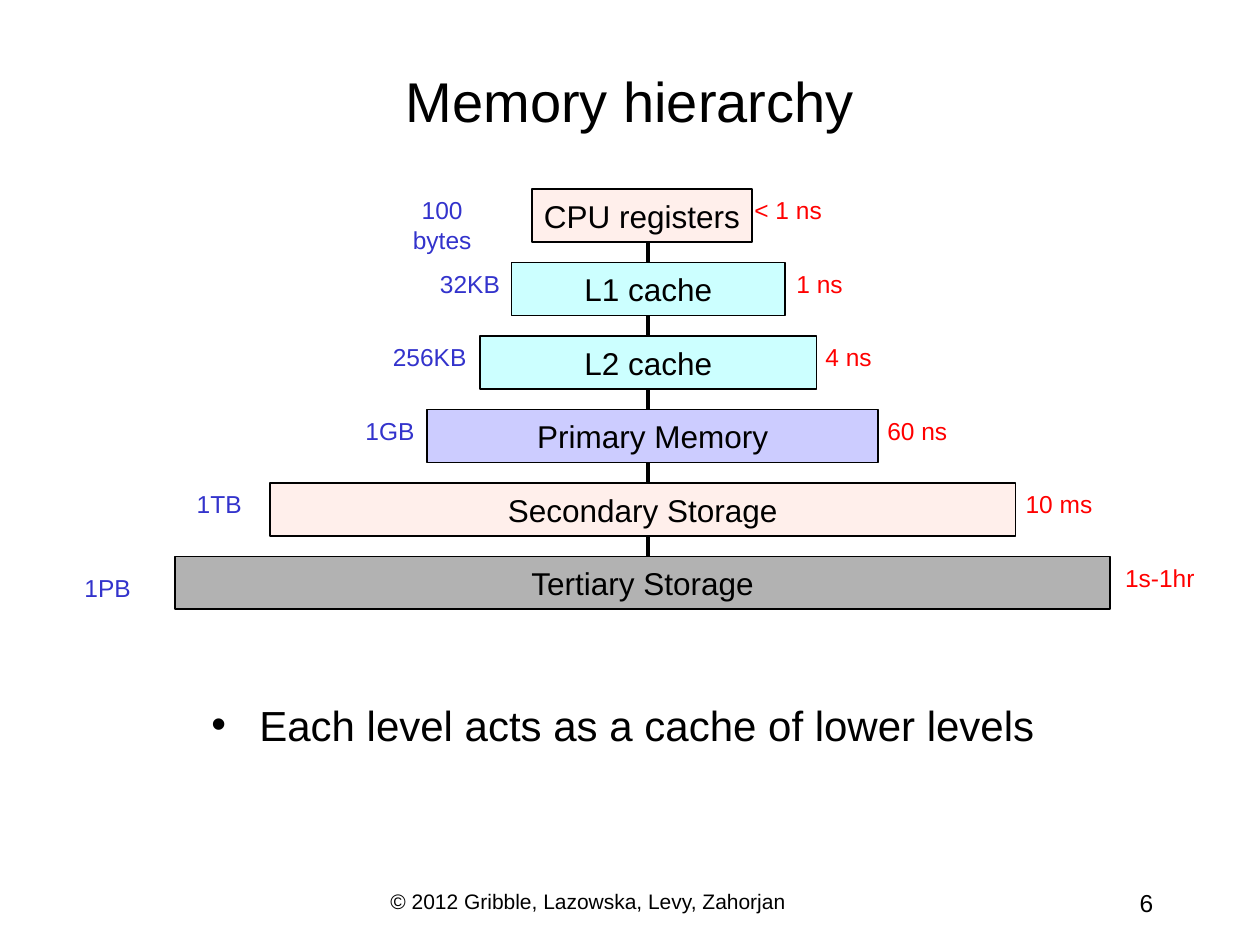
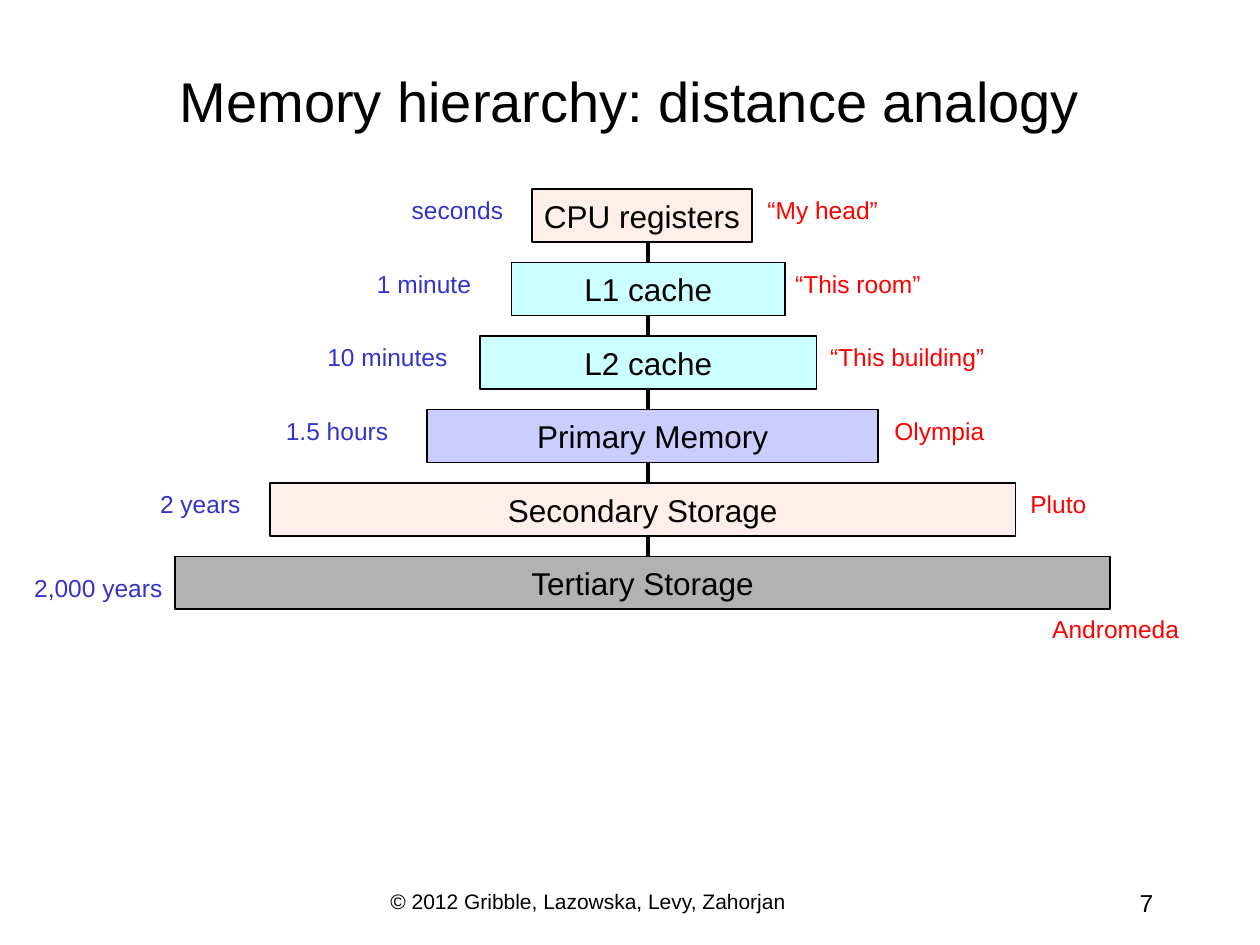
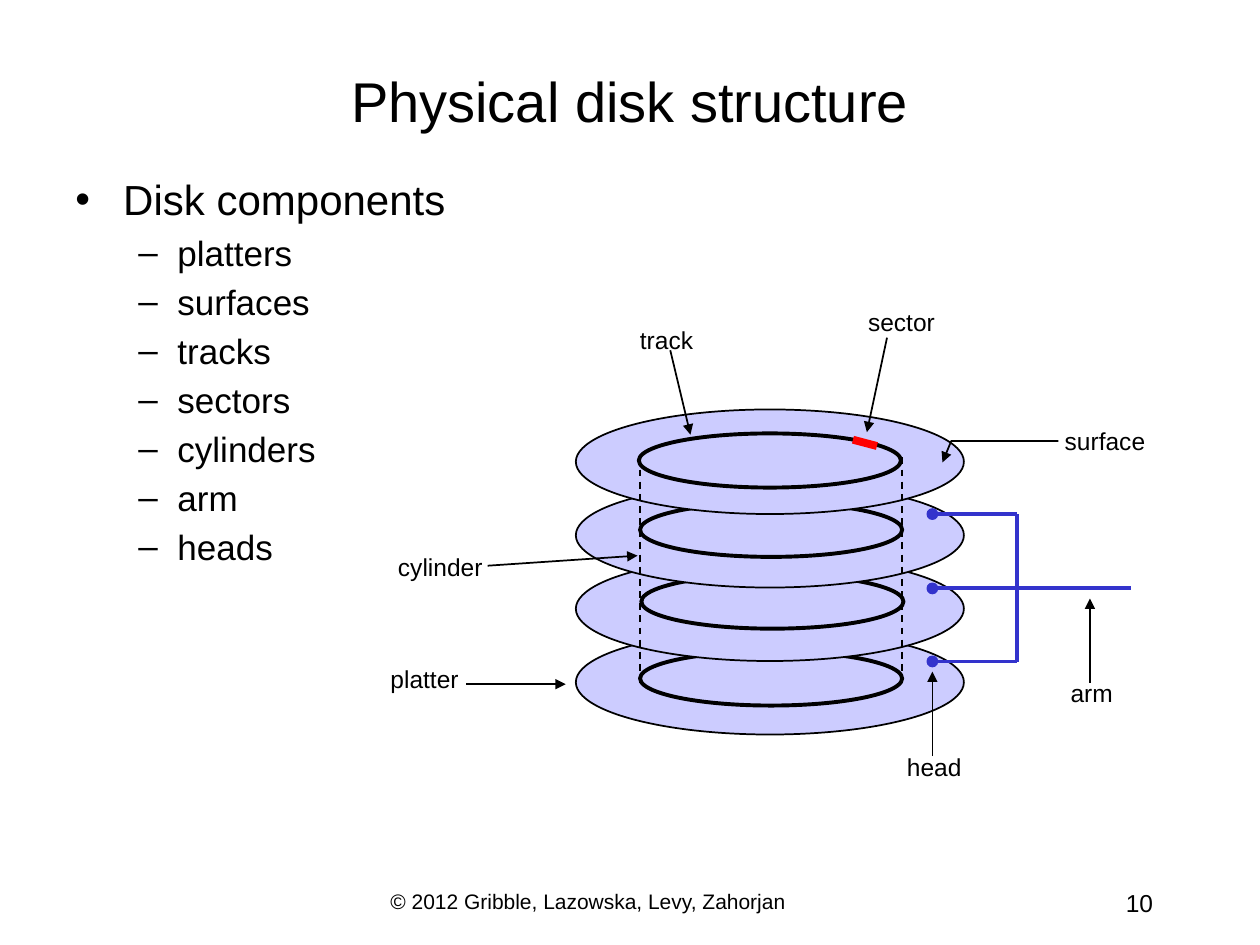
import pptx
import pptx.dml.color
import pptx.enum.dml
import pptx.enum.shapes
import pptx.enum.text
import pptx.oxml.ns
import pptx.util
import lxml.etree

Inches, Pt = pptx.util.Inches, pptx.util.Pt
SHAPE = pptx.enum.shapes.MSO_SHAPE
ALIGN = pptx.enum.text.PP_ALIGN
ANCHOR = pptx.enum.text.MSO_ANCHOR
qn = pptx.oxml.ns.qn

FONT = "Arial"
BLACK, BLUE, RED = "000000", "3333CC", "FF0000"
LILAC, CYAN, PEACH, GRAY = "CCCCFF", "CCFFFF", "FFEFEB", "B2B2B2"
FOOTER = "© 2012 Gribble, Lazowska, Levy, Zahorjan"

LEVELS = [
    ("CPU registers", 4.22, 1.75, PEACH),
    ("L1 cache", 4.06, 2.17, CYAN),
    ("L2 cache", 3.81, 2.67, CYAN),
    ("Primary Memory", 3.39, 3.58, LILAC),
    ("Secondary Storage", 2.14, 5.92, PEACH),
    ("Tertiary Storage", 1.39, 7.42, GRAY),
]
LEVEL_TOP, LEVEL_PITCH, LEVEL_HEIGHT = 1.5, 7 / 12, 0.42

SIZES = [("100 bytes", 3.23, 0.56), ("32KB", 3.39, 0.68), ("256KB", 3.02, 0.78),
         ("1GB", 2.8, 0.59), ("1TB", 1.46, 0.56), ("1PB", 0.57, 0.57, 0.08)]
LATENCIES = [("< 1 ns", 5.89, 0.73), ("1 ns", 6.22, 0.57), ("4 ns", 6.45, 0.57),
             ("60 ns", 6.94, 0.68), ("10 ms", 8.04, 0.73), ("1s-1hr", 8.83, 0.75)]
TRAVEL_TIMES = [("seconds", 3.17, 0.92), ("1 minute", 2.89, 0.95), ("10 minutes", 2.5, 1.15),
                ("1.5 hours", 2.17, 1.01), ("2 years", 1.17, 0.84), ("2,000 years", 0.17, 1.22, 0.08)]
PLACES = [("“My head”", 5.91, 1.24), ("“This room”", 6.16, 1.3), ("“This building”", 6.49, 1.42),
          ("Olympia", 7, 0.91), ("Pluto", 8.08, 0.64), ("Andromeda", 8.25, 1.21, 0.41)]

COMPONENTS = ["platters", "surfaces", "tracks", "sectors", "cylinders", "arm", "heads"]
TRACKS = [(5.08, 5.17), (5.09, 4.56), (5.08, 3.99), (5.07, 3.44)]
PLATTER_LEFT, PLATTER_TOP, PLATTER_PITCH = 4.57, 3.25, 7 / 12
DISK_LABELS = [
    ("platter", 3, 5.22, 0.74), ("surface", 8.35, 3.33, 0.84), ("track", 4.98, 2.53, 0.62),
    ("sector", 6.79, 2.39, 0.73), ("cylinder", 3.06, 4.33, 0.87), ("arm", 8.4, 5.33, 0.53),
    ("head", 7.1, 5.92, 0.63),
]
POINTERS = [
    (3.7, 5.43, 4.49, 5.43), (5.32, 2.78, 5.48, 3.45), (7.04, 2.68, 6.88, 3.43),
    (3.87, 4.49, 5.06, 4.41), (8.65, 5.42, 8.65, 4.75), (7.4, 6, 7.4, 5.33),
]
SURFACE_POINTER = [(8.4, 3.5), (7.55, 3.5), (7.48, 3.67)]
HEAD_X, ARM_X, ARM_END = 7.4, 8.07, 8.98
HEAD_YS = [4.08, 4.67, 5.25]


def rgb(color):
    return pptx.dml.color.RGBColor.from_string(color)


def style(p, size, color=BLACK, align=ALIGN.LEFT):
    p.alignment = align
    for r in p.runs:
        r.font.name, r.font.size = FONT, Pt(size)
        r.font.color.rgb = rgb(color)


def text(s, value, x, y, w, h, size, color=BLACK, align=ALIGN.LEFT, anchor=ANCHOR.TOP):
    tf = s.shapes.add_textbox(Inches(x), Inches(y), Inches(w), Inches(h)).text_frame
    tf.word_wrap, tf.vertical_anchor = True, anchor
    tf.text = value
    style(tf.paragraphs[0], size, color, align)
    return tf


def label(s, value, x, y, w, color=BLACK):
    tf = text(s, value, x, y, w, 0.33, 14, color, ALIGN.CENTER)
    tf.margin_left = tf.margin_right = 0


def bullets(s, items, x, y, w, h):
    tf = s.shapes.add_textbox(Inches(x), Inches(y), Inches(w), Inches(h)).text_frame
    tf.word_wrap = True
    for i, (value, level) in enumerate(items):
        p = tf.add_paragraph() if i else tf.paragraphs[0]
        p.text, p.level = value, level
        size, char, margin, hang = [(24, "•", 0.38, 0.38), (20, "–", 0.81, 0.31)][level]
        style(p, size)
        p.space_before = Pt(size * 0.2)
        pPr = p._p.get_or_add_pPr()
        pPr.set("marL", str(Inches(margin)))
        pPr.set("indent", str(-Inches(hang)))
        lxml.etree.SubElement(pPr, qn("a:buFont")).set("typeface", FONT)
        lxml.etree.SubElement(pPr, qn("a:buChar")).set("char", char)


def shape(shapes, kind, x, y, w, h, fill, line=BLACK, width=1):
    sp = shapes.add_shape(kind, Inches(x), Inches(y), Inches(w), Inches(h))
    sp.shadow.inherit = False
    sp.fill.solid()
    sp.fill.fore_color.rgb = rgb(fill)
    sp.line.color.rgb, sp.line.width = rgb(line), Pt(width)
    return sp


def arrowhead(sp):
    ln = sp.element.spPr.find(qn("a:ln"))
    lxml.etree.SubElement(ln, qn("a:tailEnd")).set("type", "triangle")


def line(shapes, x1, y1, x2, y2, color=BLACK, width=1, dashed=False, arrow=False):
    straight = pptx.enum.shapes.MSO_CONNECTOR.STRAIGHT
    c = shapes.add_connector(straight, Inches(x1), Inches(y1), Inches(x2), Inches(y2))
    c.line.color.rgb, c.line.width = rgb(color), Pt(width)
    if dashed:
        c.line.dash_style = pptx.enum.dml.MSO_LINE.DASH
    if arrow:
        arrowhead(c)
    lxml.etree.SubElement(c.element.spPr, qn("a:effectLst"))


def new_slide(prs, title, number):
    s = prs.slides.add_slide(prs.slide_layouts[6])
    text(s, FOOTER, 3, 7, 4, 0.5, 12)
    text(s, str(number), 7.17, 7, 2.08, 0.33, 14, align=ALIGN.RIGHT)
    text(s, title, 0.75, 0.42, 8.5, 0.75, 32, align=ALIGN.CENTER, anchor=ANCHOR.MIDDLE)
    return s


def hierarchy(s, left_labels, right_labels):
    line(s.shapes, 5.14, 1.92, 5.14, 4.5, width=2.25)
    tops = [LEVEL_TOP + i * LEVEL_PITCH for i in range(len(LEVELS))]
    for (name, x, w, fill), y in zip(LEVELS, tops):
        sp = shape(s.shapes, SHAPE.RECTANGLE, x, y, w, LEVEL_HEIGHT, fill)
        tf = sp.text_frame
        tf.word_wrap, tf.vertical_anchor = False, ANCHOR.MIDDLE
        tf.text = name
        style(tf.paragraphs[0], 18, align=ALIGN.CENTER)
    for labels, color in ((left_labels, BLUE), (right_labels, RED)):
        for (value, x, w, *drop), y in zip(labels, tops):
            label(s, value, x, y + sum(drop), w, color)


def disk(s):
    for i, (x, y) in enumerate(TRACKS):
        platter_y = PLATTER_TOP + (len(TRACKS) - 1 - i) * PLATTER_PITCH
        shape(s.shapes, SHAPE.OVAL, PLATTER_LEFT, platter_y, 3.08, 0.83, LILAC)
        shape(s.shapes, SHAPE.OVAL, x, y, 2.08, 0.43, LILAC, width=2.25)
    line(s.shapes, 6.77, 3.49, 6.96, 3.54, RED, 4.5)
    for x in (5.08, 7.16):
        line(s.shapes, x, 3.63, x, 5.42, dashed=True)

    points = [(Inches(x), Inches(y)) for x, y in SURFACE_POINTER]
    builder = s.shapes.build_freeform(*points[0])
    builder.add_line_segments(points[1:], close=False)
    sp = builder.convert_to_shape()
    sp.shadow.inherit = False
    sp.fill.background()
    sp.line.color.rgb, sp.line.width = rgb(BLACK), Pt(1)
    arrowhead(sp)

    arm = s.shapes.add_group_shape().shapes
    line(arm, ARM_X, HEAD_YS[1], ARM_END, HEAD_YS[1], BLUE, 2.25)
    line(arm, ARM_X, HEAD_YS[0], ARM_X, HEAD_YS[-1], BLUE, 2.25)
    for y in HEAD_YS:
        line(arm, HEAD_X, y, ARM_X, y, BLUE, 2.25)
        shape(arm, SHAPE.OVAL, HEAD_X - 0.04, y - 0.04, 0.08, 0.08, BLUE, BLUE)

    for pointer in POINTERS:
        line(s.shapes, *pointer, arrow=True)
    for part in DISK_LABELS:
        label(s, *part)


def main():
    prs = pptx.Presentation()
    prs.slide_width, prs.slide_height = Inches(10), Inches(7.5)

    s = new_slide(prs, "Memory hierarchy", 6)
    hierarchy(s, SIZES, LATENCIES)
    bullets(s, [("Each level acts as a cache of lower levels", 0)], 1.58, 5.5, 7.17, 0.5)

    s = new_slide(prs, "Memory hierarchy: distance analogy", 7)
    hierarchy(s, TRAVEL_TIMES, PLACES)

    s = new_slide(prs, "Physical disk structure", 10)
    bullets(s, [("Disk components", 0)] + [(c, 1) for c in COMPONENTS], 0.5, 1.33, 8.5, 5.42)
    disk(s)

    prs.save("out.pptx")


if __name__ == "__main__":
    main()
